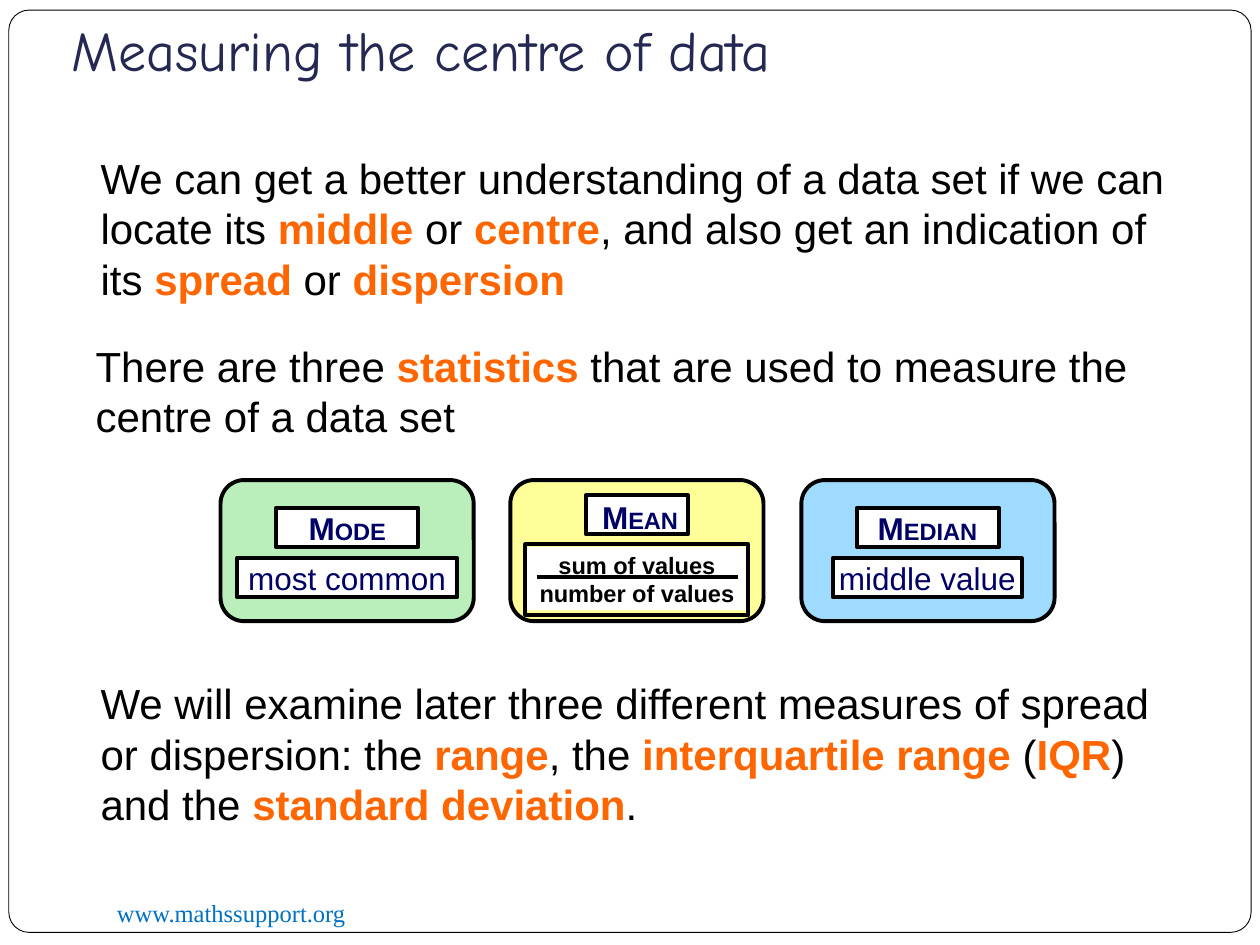
import pptx
import pptx.util
import pptx.dml.color
import pptx.enum.shapes
import pptx.enum.text
import pptx.oxml.ns
from lxml import etree
from dataclasses import dataclass

PX = 9144  # EMU per px, 100 px to the inch
SHAPES = pptx.enum.shapes.MSO_SHAPE
ANCHOR = pptx.enum.text.MSO_ANCHOR
ALIGN = pptx.enum.text.PP_ALIGN


@dataclass(frozen=True)
class Theme:
    black: str = "000000"
    white: str = "FFFFFF"
    title: str = "242852"
    link: str = "0070C0"
    accent: str = "FF6600"
    navy: str = "010066"
    green: str = "BAEEBA"
    yellow: str = "FFFF99"
    blue: str = "9FDAFF"
    body_font: str = "Arial"
    title_font: str = "Comic Neue"
    link_font: str = "Times New Roman"
    title_size: float = 32
    body_size: float = 24
    label_size: float = 18
    small_size: float = 13.5
    link_size: float = 14
    label_gap: float = 7
    frame_line: float = 0.5
    card_line: float = 2.25


THEME = Theme()


def rgb(color):
    return pptx.dml.color.RGBColor.from_string(color)


def emu(*lengths):
    return [length * PX for length in lengths]


def add_run(paragraph, text, size=THEME.body_size, color=THEME.black,
            font=THEME.body_font, bold=False):
    run = paragraph.add_run()
    run.text = text
    run.font.size = pptx.util.Pt(size)
    run.font.name = font
    run.font.bold = bold
    run.font.color.rgb = rgb(color)


def add_small_caps(paragraph, word):
    add_run(paragraph, word[0], size=THEME.label_size, color=THEME.navy, bold=True)
    add_run(paragraph, word[1:].upper(), size=THEME.small_size, color=THEME.navy, bold=True)


def add_frame(shapes, box, wrap=True, grow=True):
    frame = shapes.add_textbox(*emu(*box)).text_frame
    frame.word_wrap = wrap
    if grow:
        frame.auto_size = pptx.enum.text.MSO_AUTO_SIZE.SHAPE_TO_FIT_TEXT
    return frame


def add_panel(shapes, box, kind=SHAPES.RECTANGLE, fill=THEME.white,
              line=THEME.card_line, corner=None):
    panel = shapes.add_shape(kind, *emu(*box))
    panel.shadow.inherit = False
    if fill:
        panel.fill.solid()
        panel.fill.fore_color.rgb = rgb(fill)
    else:
        panel.fill.background()
    if line:
        panel.line.color.rgb = rgb(THEME.black)
        panel.line.width = pptx.util.Pt(line)
    else:
        panel.line.fill.background()
    if corner is not None:
        panel.adjustments[0] = corner
    return panel


def add_passage(shapes, box, text):
    """Words between asterisks are emphasised."""
    paragraph = add_frame(shapes, box).paragraphs[0]
    for index, part in enumerate(text.split("*")):
        strong = index % 2 == 1
        add_run(paragraph, part, bold=strong,
                color=THEME.accent if strong else THEME.black)


def add_page(shapes, box):
    left, top, width, height = box
    add_panel(shapes, box, kind=SHAPES.ROUNDED_RECTANGLE,
              line=THEME.frame_line, corner=0.022)

    # Web address
    address = add_frame(shapes, (left + 76, top + 700, 325, 34))
    add_run(address.paragraphs[0], "www.mathssupport.org", size=THEME.link_size,
            color=THEME.link, font=THEME.link_font)

    # Title
    title = add_frame(shapes, (left + 40, top + 4, 771, 64), grow=False)
    title.vertical_anchor = ANCHOR.BOTTOM
    title.margin_bottom = 10 * PX
    add_run(title.paragraphs[0], "Measuring the centre of data",
            size=THEME.title_size, color=THEME.title, font=THEME.title_font)


def add_card(shapes, box, fill):
    card = shapes.add_group_shape().shapes
    add_panel(card, box, kind=SHAPES.ROUNDED_RECTANGLE, fill=fill, corner=0.167)
    return card


def add_label_card(shapes, box, fill, name, meaning, meaning_width, text_width):
    left, top, width, height = box
    card = add_card(shapes, box, fill)
    for panel_top, panel_width in ((22, 113), (62, meaning_width)):
        add_panel(card, (left + (width - panel_width) // 2, top + panel_top,
                         panel_width, 31))
    labels = add_frame(card, (left + (width - text_width) // 2, top + 18,
                              text_width, 81), wrap=False)
    heading = labels.paragraphs[0]
    heading.alignment = ALIGN.CENTER
    add_small_caps(heading, name)
    caption = labels.add_paragraph()
    caption.alignment = ALIGN.CENTER
    caption.space_before = pptx.util.Pt(THEME.label_gap)
    add_run(caption, meaning, size=THEME.label_size, color=THEME.navy)


def add_fraction_card(shapes, box, fill, name, numerator, denominator):
    left, top, width, height = box
    card = add_card(shapes, box, fill)
    add_panel(card, (left + 60, top + 12, 81, 31))
    add_panel(card, (left + 13, top + 53, 175, 50), line=None)
    heading = add_frame(card, (left + 63, top + 9, 81, 40), wrap=False)
    add_small_caps(heading.paragraphs[0], name)

    # Fraction and its bar
    fraction = add_panel(card, (left + 12, top + 51, 177, 56), fill=None).text_frame
    fraction.word_wrap = False
    fraction.auto_size = pptx.enum.text.MSO_AUTO_SIZE.SHAPE_TO_FIT_TEXT
    fraction.vertical_anchor = ANCHOR.TOP
    for paragraph, term in ((fraction.paragraphs[0], numerator),
                            (fraction.add_paragraph(), denominator)):
        paragraph.alignment = ALIGN.CENTER
        add_run(paragraph, term, size=THEME.small_size, bold=True)
    bar = card.add_connector(pptx.enum.shapes.MSO_CONNECTOR.STRAIGHT,
                             *emu(left + 21, top + 77, left + 181, top + 77))
    bar.line.color.rgb = rgb(THEME.black)
    bar.line.width = pptx.util.Pt(THEME.card_line)
    properties = bar._element.find(pptx.oxml.ns.qn("p:spPr"))
    etree.SubElement(properties, pptx.oxml.ns.qn("a:effectLst"))


def add_statistics(shapes, box):
    left, top, width, height = box
    card_width = 201
    step = (width - card_width) / 2
    mode_box, mean_box, median_box = [
        (left + int(step * column), top, card_width, height) for column in range(3)]
    add_label_card(shapes, mode_box, THEME.green, "Mode", "most common", 175, 179)
    add_fraction_card(shapes, mean_box, THEME.yellow, "Mean",
                      "sum of values", "number of values")
    add_label_card(shapes, median_box, THEME.blue, "Median", "middle value", 150, 162)


def main():
    deck = pptx.Presentation()
    deck.slide_width, deck.slide_height = emu(1000, 750)
    shapes = deck.slides.add_slide(deck.slide_layouts[6]).shapes

    add_page(shapes, (7, 8, 986, 732))
    add_passage(shapes, (70, 116, 868, 131),
                "We can get a better understanding of a data set if we can locate its "
                "*middle* or *centre*, and also get an indication of its "
                "*spread* or *dispersion*")
    add_passage(shapes, (66, 265, 868, 91),
                "There are three *statistics* that are used to measure "
                "the centre of a data set")
    add_statistics(shapes, (175, 381, 662, 112))
    add_passage(shapes, (70, 533, 864, 131),
                "We will examine later three different measures of spread or dispersion: "
                "the *range*, the *interquartile range *(*IQR*) and the "
                "*standard deviation*.")
    deck.save("out.pptx")


if __name__ == "__main__":
    main()
